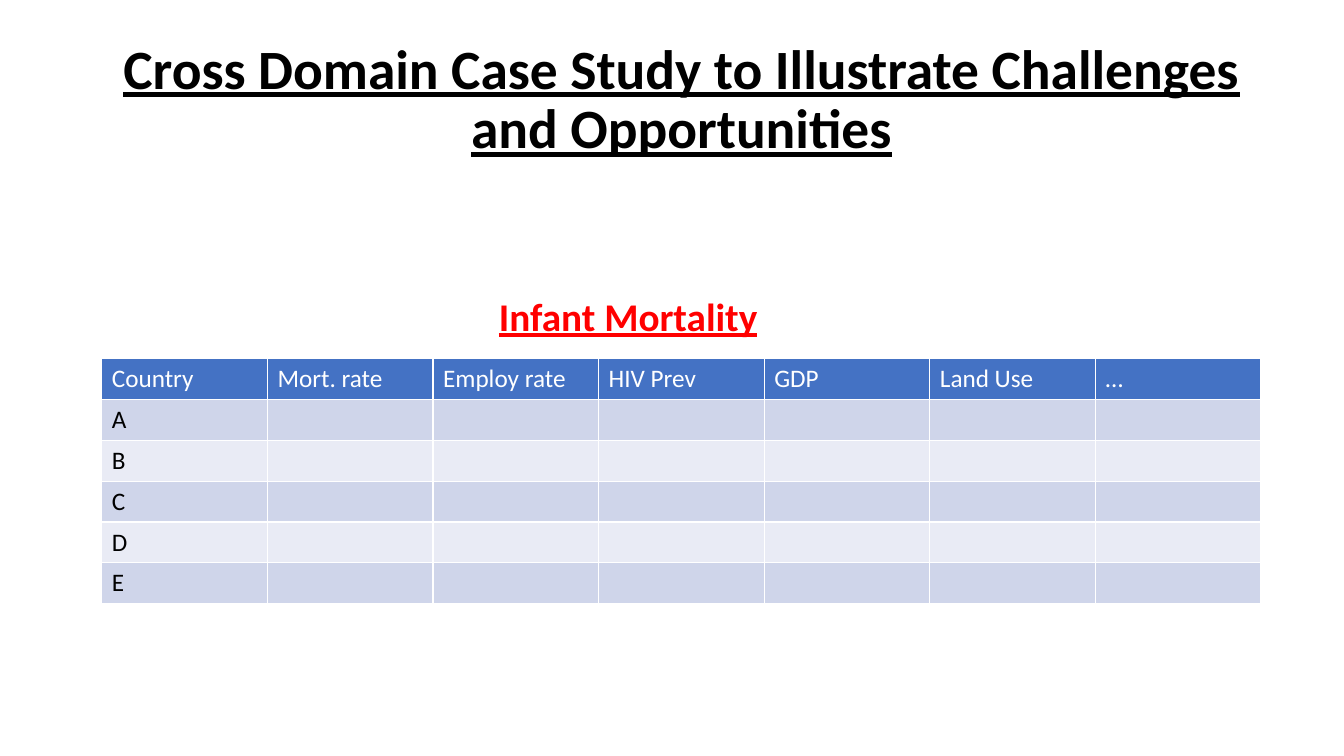
from lxml.etree import SubElement
from pptx import Presentation
from pptx.dml.color import RGBColor
from pptx.enum.text import MSO_ANCHOR as Anchor, PP_ALIGN as Align
from pptx.oxml.ns import qn
from pptx.util import Inches, Pt

BLACK = RGBColor(0x00, 0x00, 0x00)
WHITE = RGBColor(0xFF, 0xFF, 0xFF)
RED = RGBColor(0xFF, 0x00, 0x00)
HEADER_BLUE = RGBColor(0x44, 0x72, 0xC4)
BANDS = (RGBColor(0xE9, 0xEB, 0xF5), RGBColor(0xCF, 0xD5, 0xEA))

INDICATORS = ["Country", "Mort. rate", "Employ rate", "HIV Prev", "GDP", "Land Use", "…"]
COUNTRIES = ["A", "B", "C", "D", "E"]

TITLE_FONT = {"name": "Calibri", "size": Pt(39.6), "bold": True, "underline": True}
CAPTION_FONT = {"name": "Calibri", "size": Pt(28), "bold": True, "underline": True}
CELL_FONT = {"name": "Calibri", "size": Pt(18)}


def write(paragraph, wording, font_format, color):
    """Add one formatted run to a paragraph."""
    run = paragraph.add_run()
    run.text = wording
    for attribute, value in font_format.items():
        setattr(run.font, attribute, value)
    run.font.color.rgb = color


def add_heading(slide, box, wording, font_format, color, wrap, paragraph_format):
    """Place a one-paragraph heading in the given box."""
    frame = slide.shapes.add_textbox(*map(Inches, box)).text_frame
    frame.word_wrap = wrap
    frame.vertical_anchor = Anchor.TOP
    paragraph = frame.paragraphs[0]
    for attribute, value in paragraph_format.items():
        setattr(paragraph, attribute, value)
    write(paragraph, wording, font_format, color)


def add_borders(cell, color, width):
    """Draw the four borders of a table cell."""
    properties = cell._tc.get_or_add_tcPr()
    for side in ("a:lnL", "a:lnR", "a:lnT", "a:lnB"):
        line = SubElement(properties, qn(side), w=str(width))
        SubElement(SubElement(line, qn("a:solidFill")), qn("a:srgbClr"), val=str(color))


def add_country_table(slide, box):
    """Fill the given box with the table of countries and indicators."""
    left, top, width, height = map(Inches, box)
    row_count, column_count = len(COUNTRIES) + 1, len(INDICATORS)
    table = slide.shapes.add_table(row_count, column_count, left, top, width, height).table
    labels = [INDICATORS] + [[country] + [""] * (column_count - 1) for country in COUNTRIES]
    for row, row_labels in enumerate(labels):
        fill, ink = (BANDS[row % 2], BLACK) if row else (HEADER_BLUE, WHITE)
        for column, label in enumerate(row_labels):
            cell = table.cell(row, column)
            add_borders(cell, WHITE, Pt(1))
            cell.fill.solid()
            cell.fill.fore_color.rgb = fill
            if label:
                write(cell.text_frame.paragraphs[0], label, CELL_FONT, ink)


def main():
    """Build the infant mortality slide and save it."""
    deck = Presentation()
    deck.slide_width, deck.slide_height = Inches(13.33), Inches(7.5)
    slide = deck.slides.add_slide(deck.slide_layouts[6])
    add_heading(slide, (1.01, 0.36, 11.5, 1.3),
                "Cross Domain Case Study to Illustrate Challenges and Opportunities",
                TITLE_FONT, BLACK, True, {"alignment": Align.CENTER, "line_spacing": 0.9})
    add_country_table(slide, (1.01, 3.56, 11.5, 2.43))
    add_heading(slide, (4.85, 2.85, 2.8, 0.57), "Infant Mortality",
                CAPTION_FONT, RED, False, {"alignment": Align.LEFT})
    deck.save("out.pptx")


if __name__ == "__main__":
    main()
